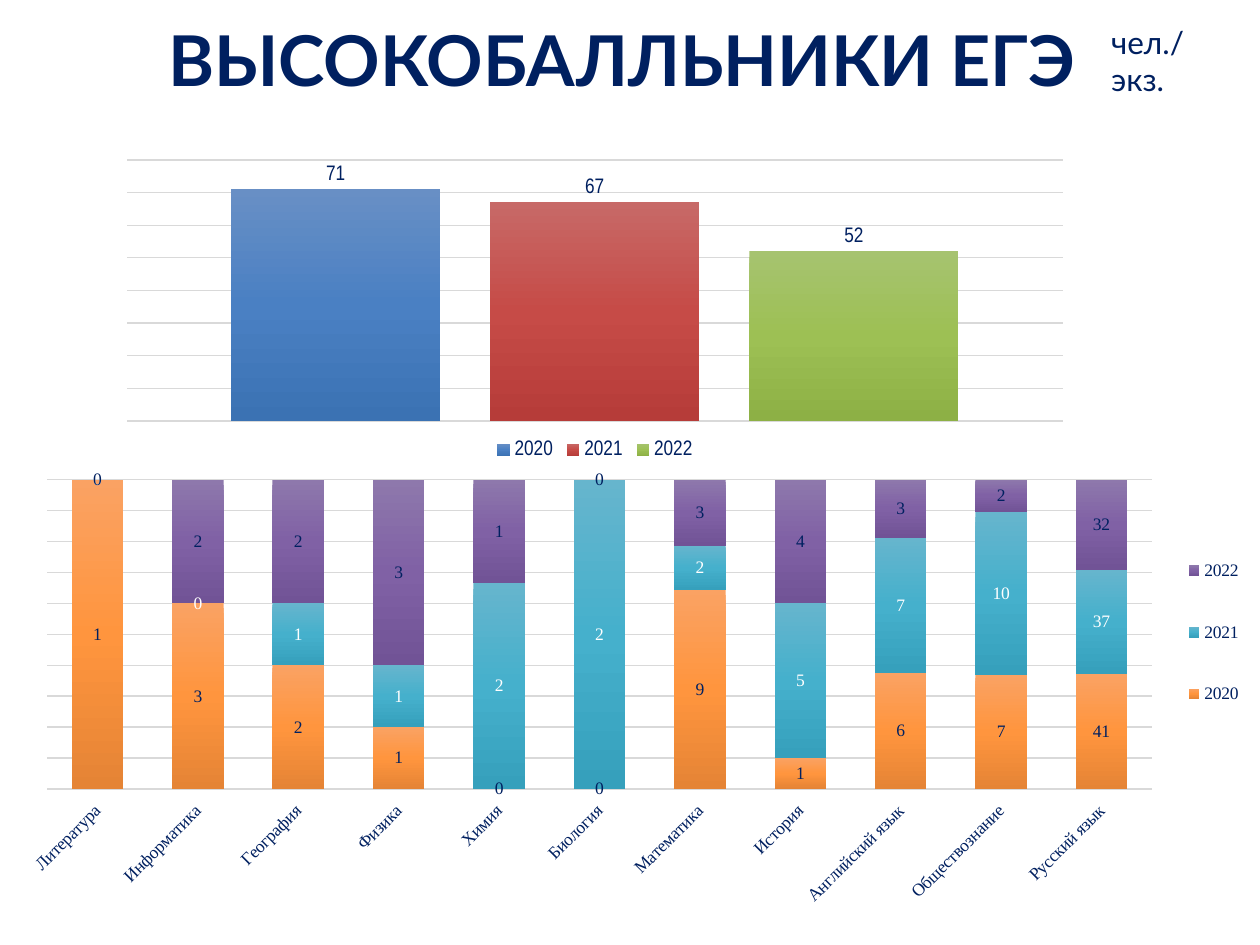
from dataclasses import dataclass
from typing import Optional

from pptx import Presentation
from pptx.chart.data import CategoryChartData
from pptx.dml.color import RGBColor
from pptx.enum.chart import XL_CHART_TYPE, XL_LABEL_POSITION, XL_LEGEND_POSITION, XL_TICK_LABEL_POSITION, XL_TICK_MARK
from pptx.enum.text import MSO_ANCHOR, PP_ALIGN
from pptx.oxml import parse_xml
from pptx.oxml.ns import nsdecls, qn
from pptx.util import Cm, Pt

COLORS = {"navy": "002060", "white": "FFFFFF", "grid": "D9D9D9"}
SUBJECTS = [
    "Литература", "Информатика", "География", "Физика", "Химия", "Биология",
    "Математика", "История", "Английский язык", "Обществознание", "Русский язык",
]


@dataclass
class YearSeries:
    name: str
    values: list[int]
    gradient: tuple[str, str, str]
    label_color: str = "navy"


@dataclass
class ColumnChart:
    kind: XL_CHART_TYPE
    frame: tuple[float, float, float, float]
    plot_area: tuple[float, float, float, float]
    categories: list[str]
    series: list[YearSeries]
    font: str
    text_size: int
    gap: int
    overlap: int
    legend: XL_LEGEND_POSITION
    legend_area: Optional[tuple[float, float, float, float]] = None
    label_position: Optional[XL_LABEL_POSITION] = None


TOTALS = ColumnChart(
    XL_CHART_TYPE.COLUMN_CLUSTERED, (2.16, 3.1, 19.66, 6.27), (0.02, 0.02, 0.96, 0.84), ["1"],
    [
        YearSeries("2020", [71], ("688FC5", "4A80C3", "3B72B3")),
        YearSeries("2021", [67], ("C76967", "C64B47", "B63C39")),
        YearSeries("2022", [52], ("A6C36F", "9DC054", "8DB045")),
    ],
    "Arial Narrow", 12, 100, -24, XL_LEGEND_POSITION.BOTTOM,
    label_position=XL_LABEL_POSITION.OUTSIDE_END,
)
BY_SUBJECT = ColumnChart(
    XL_CHART_TYPE.COLUMN_STACKED_100, (0.2, 9.47, 25.02, 8.81), (0.03, 0.02, 0.89, 0.71), SUBJECTS,
    [
        YearSeries("2020", [1, 3, 2, 1, 0, 0, 9, 1, 6, 7, 41], ("FAA263", "FF953E", "E58435")),
        YearSeries("2021", [0, 0, 1, 1, 2, 2, 2, 5, 7, 10, 37], ("66B5CD", "45B0CC", "36A0BC"), "white"),
        YearSeries("2022", [0, 2, 2, 3, 1, 0, 3, 4, 3, 2, 32], ("8E78AC", "8061A5", "715396")),
    ],
    "Times New Roman", 10, 95, 100, XL_LEGEND_POSITION.RIGHT,
    legend_area=(0.94, 0.11, 0.06, 0.52),
)


def format_font(font, color="navy", **values):
    font.color.rgb = RGBColor.from_string(COLORS[color])
    for name, value in values.items():
        setattr(font, name, value)


def add_text(page, frame, text, size, bold=False, align=PP_ALIGN.LEFT, anchor=MSO_ANCHOR.TOP):
    box = page.shapes.add_textbox(*map(Cm, frame))
    box.text_frame.word_wrap = True
    box.text_frame.vertical_anchor = anchor
    paragraph = box.text_frame.paragraphs[0]
    paragraph.alignment = align
    span = paragraph.add_run()
    span.text = text
    format_font(span.font, name="Lato", size=Pt(size), bold=bold)


def manual_layout(area, inner=False):
    """Return a c:layout element for fractions left, top, width, height."""
    target = '<c:layoutTarget val="inner"/>' if inner else ""
    sizes = "".join(f'<c:{key} val="{value}"/>' for key, value in zip("xywh", area))
    return parse_xml(
        f'<c:layout {nsdecls("c")}><c:manualLayout>{target}<c:xMode val="edge"/>'
        f'<c:yMode val="edge"/>{sizes}</c:manualLayout></c:layout>'
    )


def remove_layout(element):
    for layout in element.findall(qn("c:layout")):
        element.remove(layout)


def fill_gradient(series, colors):
    stops = "".join(
        f'<a:gs pos="{position * 50000}"><a:srgbClr val="{color}"/></a:gs>'
        for position, color in enumerate(colors)
    )
    properties = series._element.get_or_add_spPr()
    properties.insert(0, parse_xml(
        f'<a:gradFill {nsdecls("a")} rotWithShape="1"><a:gsLst>{stops}</a:gsLst>'
        '<a:lin ang="5400000" scaled="0"/></a:gradFill>'
    ))


def format_line(line, width):
    line.color.rgb = RGBColor.from_string(COLORS["grid"])
    line.width = Pt(width)


def add_column_chart(page, design: ColumnChart):
    data = CategoryChartData()
    data.categories = design.categories
    for year in design.series:
        data.add_series(year.name, year.values)
    chart = page.shapes.add_chart(design.kind, *map(Cm, design.frame), data).chart
    chart.has_title = False
    text_format = {"name": design.font, "size": Pt(design.text_size)}
    format_font(chart.font, **text_format)

    plot = chart.plots[0]
    plot.gap_width, plot.overlap = design.gap, design.overlap
    plot.vary_by_categories = False
    for series, year in zip(plot.series, design.series):
        fill_gradient(series, year.gradient)
        labels = series.data_labels
        labels.show_value = True
        if design.label_position is not None:
            labels.position = design.label_position
        format_font(labels.font, year.label_color, **text_format)

    chart.value_axis.visible = False
    chart.value_axis.has_major_gridlines = True
    format_line(chart.value_axis.major_gridlines.format.line, 0.75)

    chart.has_legend = True
    chart.legend.position = design.legend
    chart.legend.include_in_layout = False
    format_font(chart.legend.font, **text_format)
    if design.legend_area:
        legend = chart.legend._element
        remove_layout(legend)
        legend.find(qn("c:legendPos")).addnext(manual_layout(design.legend_area))

    plot_area = chart._chartSpace.chart.plotArea
    remove_layout(plot_area)
    plot_area.insert(0, manual_layout(design.plot_area, inner=True))
    return chart


def slant_subject_names(axis):
    axis.major_tick_mark = axis.minor_tick_mark = XL_TICK_MARK.NONE
    axis.tick_label_position = XL_TICK_LABEL_POSITION.LOW
    format_line(axis.format.line, 1)
    format_font(axis.tick_labels.font, name=BY_SUBJECT.font, size=Pt(BY_SUBJECT.text_size))
    axis._element.find(qn("c:txPr")).find(qn("a:bodyPr")).set("rot", "-2700000")


def main():
    deck = Presentation()
    deck.slide_width, deck.slide_height = Cm(25.4), Cm(19.05)
    page = deck.slides.add_slide(deck.slide_layouts[6])

    add_text(page, (2.41, 0.33, 20.6, 1.7), "ВЫСОКОБАЛЛЬНИКИ ЕГЭ ", 40, True, PP_ALIGN.CENTER, MSO_ANCHOR.MIDDLE)
    totals = add_column_chart(page, TOTALS)
    totals.category_axis.visible = False
    totals.value_axis.minimum_scale, totals.value_axis.maximum_scale = 0, 80
    totals.value_axis.major_unit = 10
    add_text(page, (22.15, 0.33, 2.31, 1.02), "чел./экз.", 18)
    slant_subject_names(add_column_chart(page, BY_SUBJECT).category_axis)

    deck.save("out.pptx")


if __name__ == "__main__":
    main()
